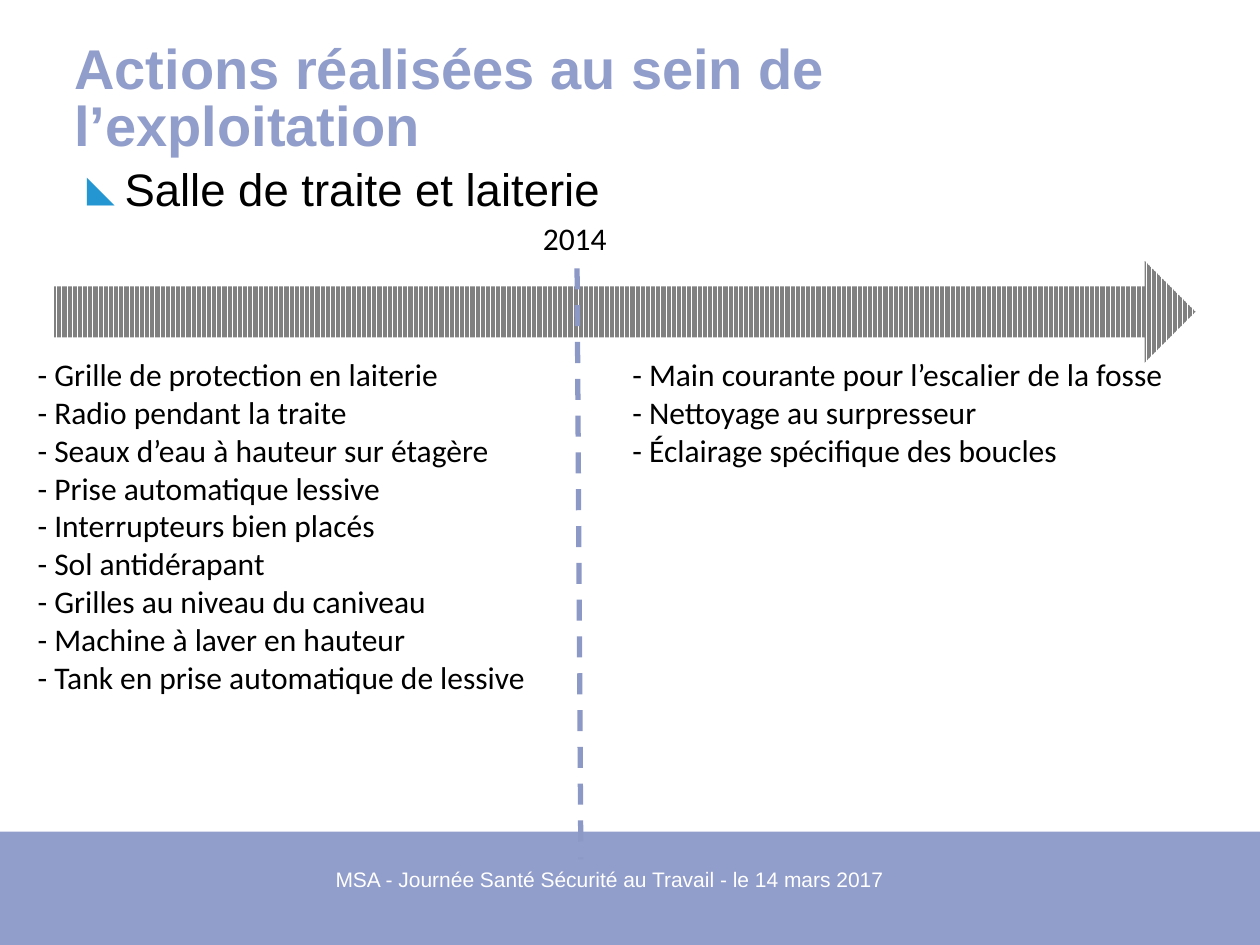
import pptx
import pptx.util
import pptx.dml.color
import pptx.enum.dml
import pptx.enum.shapes
import pptx.enum.text
from lxml import etree
from pptx.oxml.ns import qn

Inches, Pt = pptx.util.Inches, pptx.util.Pt
RGBColor = pptx.dml.color.RGBColor
Align = pptx.enum.text.PP_ALIGN
Anchor = pptx.enum.text.MSO_ANCHOR
Shape = pptx.enum.shapes.MSO_SHAPE

LAVENDER = RGBColor(0x91, 0x9D, 0xCA)
DIVIDER = RGBColor(0x8C, 0x99, 0xC7)
GREY = RGBColor(0x80, 0x80, 0x80)
WHITE = RGBColor(0xFF, 0xFF, 0xFF)
BLACK = RGBColor(0, 0, 0)
BULLET_BLUE = "2497D3"

TITLE = "Actions réalisées au sein de l’exploitation"
SUBTITLE = "Salle de traite et laiterie"
FOOTER = "MSA - Journée Santé Sécurité au Travail - le 14 mars 2017"
YEAR = "2014"
ACTIONS_BEFORE = [
    "- Grille de protection en laiterie",
    "- Radio pendant la traite",
    "- Seaux d’eau à hauteur sur étagère",
    "- Prise automatique lessive",
    "- Interrupteurs bien placés",
    "- Sol antidérapant",
    "- Grilles au niveau du caniveau",
    "- Machine à laver en hauteur",
    "- Tank en prise automatique de lessive",
]
ACTIONS_AFTER = [
    "- Main courante pour l’escalier de la fosse",
    "- Nettoyage au surpresseur",
    "- Éclairage spécifique des boucles",
]


def set_text(frame, lines, size, font, color, bold=False):
    frame.text = "\n".join(lines)
    for para in frame.paragraphs:
        for span in para.runs:
            span.font.size = Pt(size)
            span.font.name = font
            span.font.color.rgb = color
            span.font.bold = bold


def add_text(slide, place, lines, size, font="Calibri", color=BLACK, wrap=True):
    box = slide.shapes.add_textbox(*map(Inches, place))
    box.text_frame.word_wrap = wrap
    set_text(box.text_frame, lines, size, font, color)
    return box.text_frame


def add_preset(slide, preset, place):
    shape = slide.shapes.add_shape(preset, *map(Inches, place))
    shape.shadow.inherit = False
    shape.line.fill.background()
    return shape


def add_bullet(para, symbol, color, percent, indent):
    properties = para._p.get_or_add_pPr()
    properties.set("marL", str(Inches(indent)))
    properties.set("indent", str(-Inches(indent)))
    bullet_color = etree.SubElement(properties, qn("a:buClr"))
    etree.SubElement(bullet_color, qn("a:srgbClr"), val=color)
    etree.SubElement(properties, qn("a:buSzPct"), val=str(percent * 1000))
    etree.SubElement(properties, qn("a:buFont"), typeface="Arial")
    etree.SubElement(properties, qn("a:buChar"), char=symbol)


def main():
    deck = pptx.Presentation()
    deck.slide_width, deck.slide_height = Inches(10), Inches(7.5)
    slide = deck.slides.add_slide(deck.slide_layouts[5])

    band = add_preset(slide, Shape.RECTANGLE, (0, 6.6, 10, 0.9))
    band.fill.solid()
    band.fill.fore_color.rgb = LAVENDER
    footer = add_text(slide, (2.48, 6.87, 4.72, 0.4), [FOOTER], 12, "Arial", WHITE)
    footer.margin_top = Inches(0.01)
    footer.paragraphs[0].alignment = Align.CENTER

    title = slide.shapes.title
    title.left, title.top, title.width, title.height = map(
        Inches, (0.59, 0.27, 8.82, 1.06))
    frame = title.text_frame
    frame.margin_left = frame.margin_right = frame.margin_top = frame.margin_bottom = 0
    frame.vertical_anchor = Anchor.MIDDLE
    frame.word_wrap = True
    set_text(frame, [TITLE], 32, "Arial", LAVENDER, bold=True)
    frame.paragraphs[0].alignment = Align.LEFT
    frame.paragraphs[0].line_spacing = 0.85

    add_text(slide, (0.2, 2.77, 4.37, 2.83), ACTIONS_BEFORE, 18)

    arrow = add_preset(slide, Shape.RIGHT_ARROW, (0.43, 2.07, 9.06, 0.81))
    arrow.fill.patterned()
    arrow.fill.pattern = pptx.enum.dml.MSO_PATTERN.DARK_VERTICAL
    arrow.fill.fore_color.rgb = GREY
    arrow.fill.back_color.rgb = WHITE

    add_text(slide, (4.21, 1.69, 0.71, 0.4), [YEAR], 18, wrap=False)

    divider = slide.shapes.add_connector(
        pptx.enum.shapes.MSO_CONNECTOR.STRAIGHT,
        *map(Inches, (4.58, 2.13, 4.61, 6.82)))
    divider.line.color.rgb = DIVIDER
    divider.line.width = Pt(3)
    divider.line.dash_style = pptx.enum.dml.MSO_LINE.DASH
    etree.SubElement(divider._element.spPr, qn("a:effectLst"))

    subtitle = add_text(slide, (0.59, 1.23, 8.82, 0.66), [SUBTITLE], 26, "Arial")
    add_bullet(subtitle.paragraphs[0], "◣", BULLET_BLUE, 80, 0.3)

    add_text(slide, (4.92, 2.77, 4.56, 1.01), ACTIONS_AFTER, 18)

    deck.save("out.pptx")


if __name__ == "__main__":
    main()
